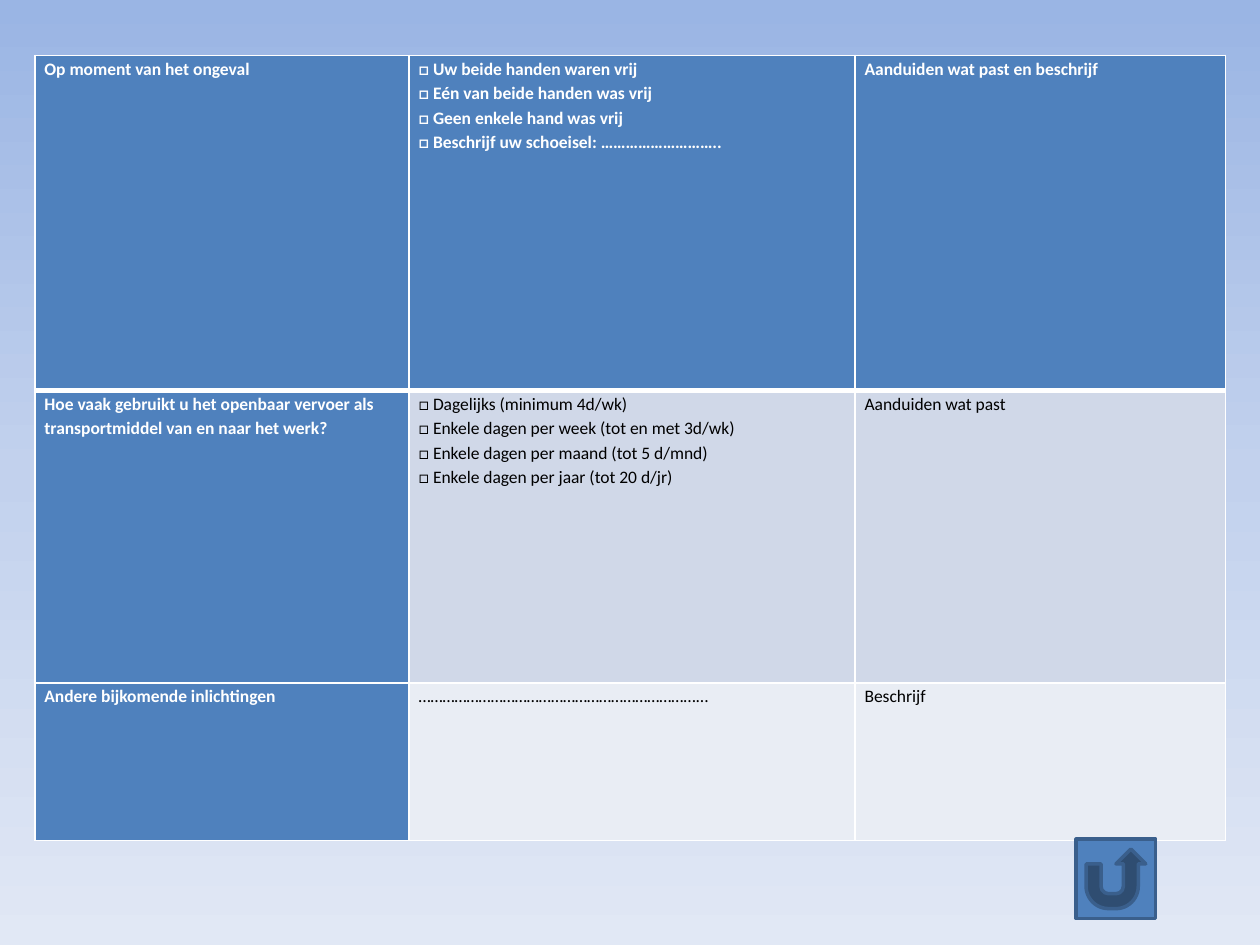
from copy import deepcopy

from lxml import etree
from pptx import Presentation
from pptx.dml.color import RGBColor
from pptx.enum.shapes import MSO_SHAPE
from pptx.oxml.ns import qn
from pptx.util import Pt

RETURN_BUTTON = MSO_SHAPE.ACTION_BUTTON_RETURN
BLUE = RGBColor(0x4F, 0x81, 0xBD)
DARK_BLUE = RGBColor(0x3A, 0x5F, 0x8C)
BAND_DARK = RGBColor(0xD0, 0xD8, 0xE8)
BAND_LIGHT = RGBColor(0xE9, 0xED, 0xF4)
WHITE = RGBColor(0xFF, 0xFF, 0xFF)
BLACK = RGBColor(0, 0, 0)
BACKGROUND = [
    (0, RGBColor(0x9A, 0xB5, 0xE4)),
    (0.5, RGBColor(0xC2, 0xD1, 0xED)),
    (1, RGBColor(0xE1, 0xE8, 0xF5)),
]

ROWS = [
    (["Op moment van het ongeval"],
     ["□ Uw beide handen waren vrij", "□ Eén van beide handen was vrij",
      "□ Geen enkele hand was vrij", "□ Beschrijf uw schoeisel: ……………………….."],
     ["Aanduiden wat past en beschrijf"]),
    (["Hoe vaak gebruikt u het openbaar vervoer als transportmiddel van en naar het werk?"],
     ["□ Dagelijks (minimum 4d/wk)", "□ Enkele dagen per week (tot en met 3d/wk)",
      "□ Enkele dagen per maand (tot 5 d/mnd)", "□ Enkele dagen per jaar (tot 20 d/jr)"],
     ["Aanduiden wat past"]),
    (["Andere bijkomende inlichtingen"],
     ["……………………………………………………………..."],
     ["Beschrijf"]),
]
ROW_FILLS = [BLUE, BAND_DARK, BAND_LIGHT]
COL_WIDTHS = [213.8, 254.9, 211.7]
ROW_HEIGHTS = [191.5, 167, 90]
LEFT, TOP = 20, 31.7


def set_background(s):
    """Fill the slide with a vertical three-stop gradient."""
    fill = s.background.fill
    fill.gradient()
    fill.gradient_angle = 270
    stops = s.element.find(".//" + qn("a:gsLst"))
    stops.insert(1, deepcopy(stops[0]))
    for stop, (position, color) in zip(s.background.fill.gradient_stops, BACKGROUND):
        stop.position = position
        stop.color.rgb = color


def add_borders(cell, top, bottom):
    """Draw white borders around a cell, with widths in points."""
    tc_pr = cell._tc.get_or_add_tcPr()
    for side, width in (("L", 1), ("R", 1), ("T", top), ("B", bottom)):
        ln = etree.SubElement(tc_pr, qn("a:ln" + side), w=str(Pt(width)))
        fill = etree.SubElement(ln, qn("a:solidFill"))
        etree.SubElement(fill, qn("a:srgbClr"), val=str(WHITE))


def fill_cell(cell, lines, fill, heading):
    """Colour a cell and write its lines as one paragraph."""
    cell.fill.solid()
    cell.fill.fore_color.rgb = fill
    cell.margin_left = cell.margin_right = Pt(5.4)
    cell.margin_top = cell.margin_bottom = 0
    p = cell.text_frame.paragraphs[0]
    p.line_spacing = 1.15
    p.space_after = Pt(10)
    for i, line in enumerate(lines):
        if i:
            p.add_line_break()
        r = p.add_run()
        r.text = line
        r.font.name = "Calibri"
        r.font.size = Pt(10)
        r.font.bold = heading
        r.font.color.rgb = WHITE if heading else BLACK


def add_questions(s):
    """Add the table of questions."""
    table = s.shapes.add_table(
        len(ROWS), len(COL_WIDTHS), Pt(LEFT), Pt(TOP),
        Pt(sum(COL_WIDTHS)), Pt(sum(ROW_HEIGHTS))).table
    table.first_col = True
    for col, width in zip(table.columns, COL_WIDTHS):
        col.width = Pt(width)
    for i, (row, height) in enumerate(zip(table.rows, ROW_HEIGHTS)):
        row.height = Pt(height)
        for j, lines in enumerate(ROWS[i]):
            heading = i == 0 or j == 0
            cell = table.cell(i, j)
            add_borders(cell, 3 if i == 1 else 1, 3 if i == 0 else 1)
            fill_cell(cell, lines, BLUE if heading else ROW_FILLS[i], heading)


def add_return_button(s):
    """Add the return button below the table."""
    sp = s.shapes.add_shape(RETURN_BUTTON, Pt(615), Pt(479.5), Pt(45.4), Pt(45.4))
    sp.shadow.inherit = False
    sp.fill.solid()
    sp.fill.fore_color.rgb = BLUE
    sp.line.color.rgb = DARK_BLUE
    sp.line.width = Pt(2)


def main():
    """Build the slide and save it."""
    prs = Presentation()
    prs.slide_width, prs.slide_height = Pt(720), Pt(540)
    s = prs.slides.add_slide(prs.slide_layouts[6])
    set_background(s)
    add_questions(s)
    add_return_button(s)
    prs.save("out.pptx")


if __name__ == "__main__":
    main()
